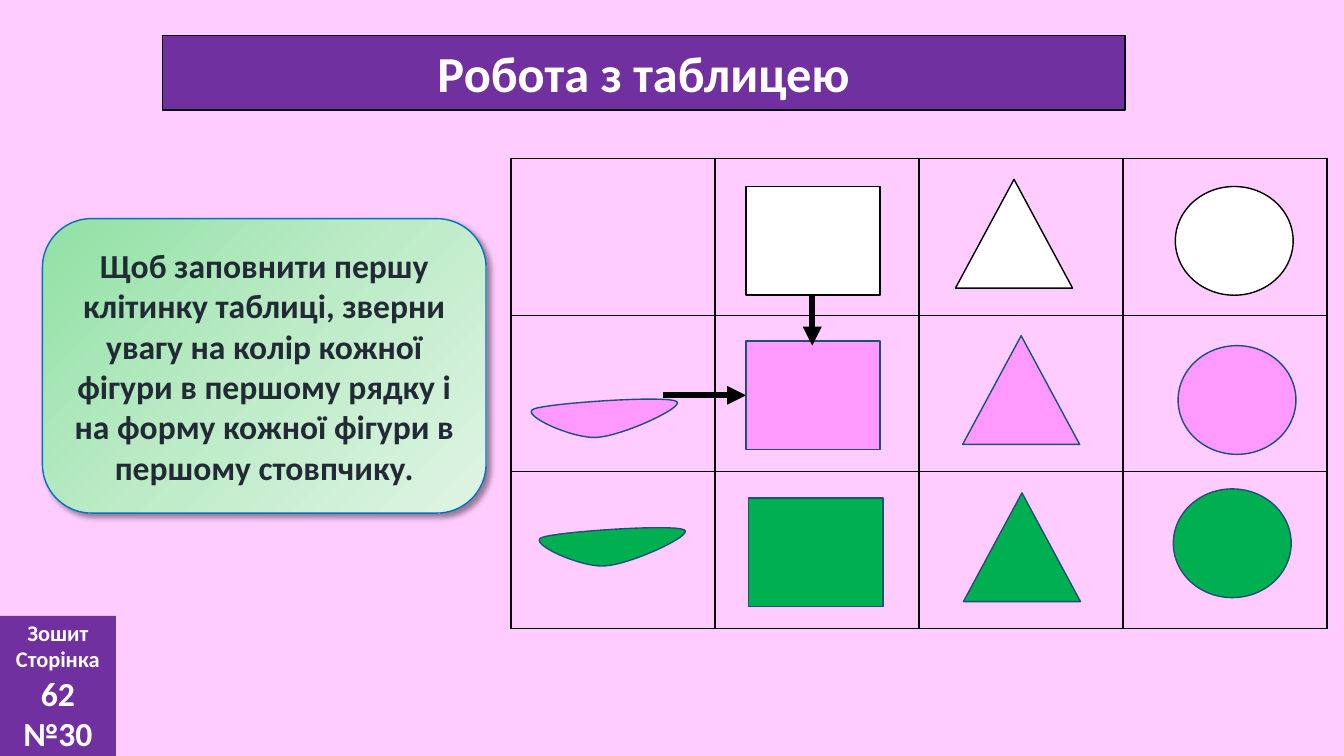
from copy import deepcopy
from dataclasses import dataclass

from lxml import etree
from pptx import Presentation
from pptx import util as u
from pptx.dml.color import RGBColor
from pptx.enum import shapes, text
from pptx.oxml.ns import qn

WHITE, BLACK, NAVY = "FFFFFF", "000000", "1F4E79"
PURPLE, PINK, GREEN = "7030A0", "FF99FF", "00B050"
FIGURE_HEIGHT = 2.74
CURVE_STEPS = 16
LENS_CURVES = [
    [(13.44, 10.31), (13.11, 10.46), (14.45, 11.07), (15.04, 11.02)],
    [(15.04, 11.02), (15.65, 11.0), (17.32, 10.24), (17.04, 10.11)],
    [(17.04, 10.11), (16.76, 9.96), (13.77, 10.16), (13.44, 10.31)],
]


@dataclass(frozen=True)
class Figure:
    kind: shapes.MSO_SHAPE
    width: float
    corners: list[tuple[float, float]]


@dataclass(frozen=True)
class Lens:
    color: str
    dx: float
    dy: float


@dataclass(frozen=True)
class Arrow:
    start: tuple[float, float]
    end: tuple[float, float]


FIGURES = [
    Figure(shapes.MSO_SHAPE.RECTANGLE, 3.38, [(18.8, 4.7), (18.8, 8.59), (18.87, 12.55)]),
    Figure(shapes.MSO_SHAPE.ISOSCELES_TRIANGLE, 2.95, [(24.08, 4.52), (24.26, 8.46), (24.28, 12.42)]),
    Figure(shapes.MSO_SHAPE.OVAL, 2.97, [(29.62, 4.7), (29.69, 8.71), (29.57, 12.32)]),
]
ROW_COLORS = [(WHITE, BLACK), (PINK, NAVY), (GREEN, NAVY)]
LENSES = [Lens(PINK, 0, 0), Lens(GREEN, 0.2, 3.24)]
ARROWS = [Arrow((20.47, 7.42), (20.47, 8.71)), Arrow((16.71, 9.96), (18.8, 9.96))]


def rgb(color: str) -> RGBColor:
    return RGBColor.from_string(color)


def child(parent, tag: str, **attributes: str):
    return etree.SubElement(parent, qn(tag), attributes)


def paint(shape, fill: str, line: str | None = None) -> None:
    shape.fill.solid()
    shape.fill.fore_color.rgb = rgb(fill)
    outline(shape, line)


def outline(shape, line: str | None) -> None:
    if line:
        shape.line.color.rgb = rgb(line)
        shape.line.width = u.Pt(1)
    else:
        shape.line.fill.background()
    shape.shadow.inherit = False


def add_preset(slide, kind, left: float, top: float, width: float, height: float):
    return slide.shapes.add_shape(kind, u.Cm(left), u.Cm(top), u.Cm(width), u.Cm(height))


def write(shape, words: str, *, sizes: list[float], color: str = WHITE) -> None:
    frame = shape.text_frame
    frame.text = words
    frame.word_wrap = True
    frame.auto_size = text.MSO_AUTO_SIZE.NONE
    frame.vertical_anchor = text.MSO_ANCHOR.MIDDLE
    for paragraph, size in zip(frame.paragraphs, sizes):
        paragraph.alignment = text.PP_ALIGN.CENTER
        font = paragraph.runs[0].font
        font.name, font.size, font.bold = "Calibri", u.Pt(size), True
        font.color.rgb = rgb(color)


def add_heading(slide) -> None:
    heading = slide.shapes.title
    heading.left, heading.top = u.Cm(4.09), u.Cm(0.89)
    heading.width, heading.height = u.Cm(24.26), u.Cm(1.88)
    paint(heading, PURPLE, BLACK)
    write(heading, "Робота з таблицею", sizes=[36])


def add_hint(slide) -> None:
    hint = add_preset(slide, shapes.MSO_SHAPE.ROUNDED_RECTANGLE, 1.07, 5.51, 11.18, 7.42)
    hint.fill.gradient()
    hint.fill.gradient_angle = 315
    for stop, color in zip(hint.fill.gradient_stops, ["90E1A4", "DFF4E4"]):
        stop.color.rgb = rgb(color)
        stop.position = 0 if color == "90E1A4" else 1
    properties = hint.element.spPr
    first_stop = properties.find(".//" + qn("a:gs"))
    middle_stop = deepcopy(first_stop)
    middle_stop.set("pos", "50000")
    middle_stop[0].set("val", "BDEBC7")
    first_stop.addnext(middle_stop)
    outline(hint, "0070C0")
    shadow = child(properties.find(qn("a:effectLst")), "a:outerShdw",
                   blurRad=str(u.Pt(4)), dist=str(u.Pt(3)), dir="2700000",
                   algn="tl", rotWithShape="0")
    child(child(shadow, "a:srgbClr", val=BLACK), "a:alpha", val="40000")
    write(hint, "Щоб заповнити першу клітинку таблиці, зверни увагу на колір кожної "
                "фігури в першому рядку і на форму кожної фігури в першому стовпчику.",
          sizes=[24], color="222A35")


def add_grid(slide) -> None:
    grid = slide.shapes.add_table(3, 4, u.Cm(12.88), u.Cm(3.99), u.Cm(20.55), u.Cm(11.86)).table
    grid.first_row = grid.horz_banding = False
    for column in grid.columns:
        column.width = u.Cm(5.14)
    for row in grid.rows:
        row.height = u.Cm(3.95)
    for cell in grid.iter_cells():
        properties = cell._tc.get_or_add_tcPr()
        for side in ("a:lnL", "a:lnR", "a:lnT", "a:lnB"):
            border = child(properties, side, w=str(u.Pt(1)))
            child(child(border, "a:solidFill"), "a:srgbClr", val=BLACK)
        cell.fill.background()


def curve_point(curve: list[tuple[float, float]], t: float) -> tuple[float, float]:
    weights = [(1 - t) ** 3, 3 * t * (1 - t) ** 2, 3 * t ** 2 * (1 - t), t ** 3]
    return (sum(w * x for w, (x, _) in zip(weights, curve)),
            sum(w * y for w, (_, y) in zip(weights, curve)))


def add_lens(slide, lens: Lens) -> None:
    points = [curve_point(curve, step / CURVE_STEPS)
              for curve in LENS_CURVES for step in range(CURVE_STEPS)]
    edge = [(u.Cm(x + lens.dx), u.Cm(y + lens.dy)) for x, y in points]
    builder = slide.shapes.build_freeform(*edge[0])
    builder.add_line_segments(edge[1:], close=True)
    paint(builder.convert_to_shape(), lens.color, NAVY)


def add_figure(slide, figure: Figure) -> None:
    for (left, top), (fill, line) in zip(figure.corners, ROW_COLORS):
        paint(add_preset(slide, figure.kind, left, top, figure.width, FIGURE_HEIGHT), fill, line)


def add_arrow(slide, arrow: Arrow) -> None:
    ends = [u.Cm(value) for value in (*arrow.start, *arrow.end)]
    pointer = slide.shapes.add_connector(shapes.MSO_CONNECTOR.STRAIGHT, *ends)
    pointer.line.color.rgb = rgb(BLACK)
    pointer.line.width = u.Pt(4.5)
    child(pointer.line._get_or_add_ln(), "a:tailEnd", type="triangle")
    child(pointer.element.spPr, "a:effectLst")


def add_page_badge(slide) -> None:
    badge = add_preset(slide, shapes.MSO_SHAPE.RECTANGLE, 0, 15.52, 2.92, 3.53)
    paint(badge, PURPLE)
    write(badge, "Зошит\nСторінка\n62 №30", sizes=[16, 16, 24])


def main() -> None:
    deck = Presentation()
    deck.slide_width, deck.slide_height = u.Cm(33.87), u.Cm(19.05)
    slide = deck.slides.add_slide(deck.slide_layouts[5])
    slide.background.fill.solid()
    slide.background.fill.fore_color.rgb = rgb("FFCCFF")
    add_heading(slide)
    add_hint(slide)
    add_grid(slide)
    for lens in LENSES:
        add_lens(slide, lens)
    for figure in FIGURES:
        add_figure(slide, figure)
    for arrow in ARROWS:
        add_arrow(slide, arrow)
    add_page_badge(slide)
    deck.save("out.pptx")


if __name__ == "__main__":
    main()
